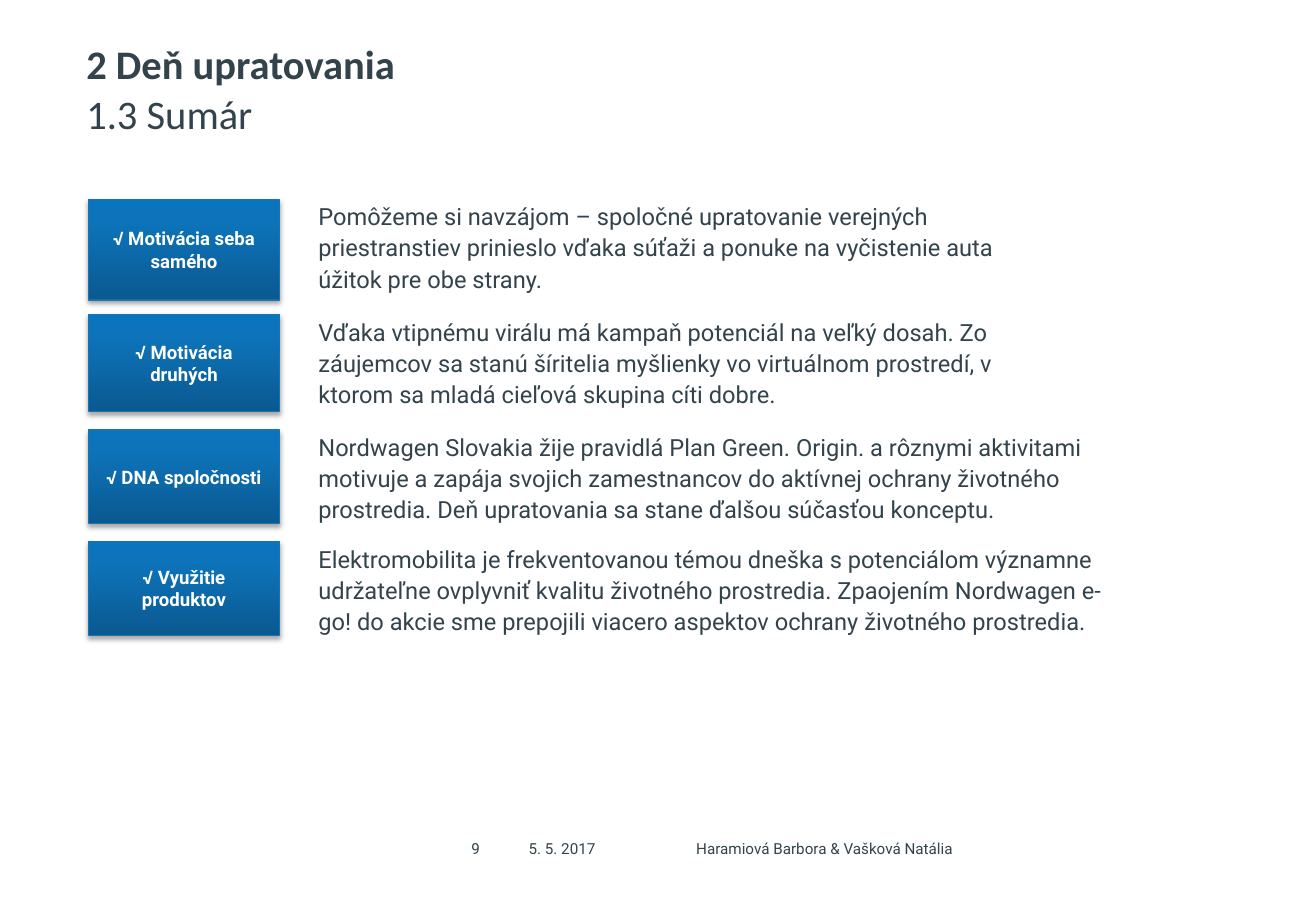
import copy
from dataclasses import dataclass

import lxml.etree
import pptx
import pptx.dml.color
import pptx.enum.shapes
import pptx.enum.text
import pptx.oxml
import pptx.oxml.ns
import pptx.slide
import pptx.util
from pptx.util import Inches

SLATE = pptx.dml.color.RGBColor(0x33, 0x43, 0x4C)
WHITE = pptx.dml.color.RGBColor(0xFF, 0xFF, 0xFF)
OUTLINE = pptx.dml.color.RGBColor(0x1E, 0x72, 0xAC)
DEEP_BLUE = pptx.dml.color.RGBColor(0x0A, 0x59, 0x90)
MID_BLUE = pptx.dml.color.RGBColor(0x0D, 0x74, 0xBB)
LIGHT_BLUE = pptx.dml.color.RGBColor(0x0A, 0x75, 0xBF)
GRADIENT = ((0, DEEP_BLUE), (80, MID_BLUE), (100, LIGHT_BLUE))
HEADING_FONT = "Calibri"
BODY_FONT = "Roboto"
SHADOW = (
    f'<a:outerShdw {pptx.oxml.ns.nsdecls("a")} blurRad="39370" dist="22860" '
    'dir="5400000" rotWithShape="0"><a:srgbClr val="000000">'
    '<a:alpha val="35000"/></a:srgbClr></a:outerShdw>'
)


@dataclass(frozen=True)
class Label:
    text: str
    left: float
    top: float
    width: float
    height: float
    size: float
    font: str = BODY_FONT
    bold: bool = False
    line_spacing: float = 1.0
    space_after: float = 0


@dataclass(frozen=True)
class Point:
    title: str
    detail: str
    top: float
    height: float
    detail_width: float


LABELS = (
    Label("2 Deň upratovania", 0.71, 0.31, 8.88, 0.39, 24, HEADING_FONT, True, 1.03),
    Label("1.3 Sumár", 0.71, 0.72, 8.88, 0.58, 24, HEADING_FONT, False, 1.03, 10),
    Label("9", 3.88, 6.91, 0.39, 0.16, 9),
    Label("5. 5. 2017", 4.35, 6.91, 1.18, 0.16, 9),
    Label("Haramiová Barbora & Vašková Natália", 5.73, 6.91, 3.84, 0.16, 9),
)

POINTS = (
    Point(
        "√ Motivácia seba samého",
        "Pomôžeme si navzájom – spoločné upratovanie verejných priestranstiev "
        "prinieslo vďaka súťaži a ponuke na vyčistenie auta úžitok pre obe strany.",
        1.64, 0.83, 6.12,
    ),
    Point(
        "√ Motivácia druhých",
        "Vďaka vtipnému virálu má kampaň potenciál na veľký dosah. Zo záujemcov "
        "sa stanú šíritelia myšlienky vo virtuálnom prostredí, v ktorom sa mladá "
        "cieľová skupina cíti dobre.",
        2.59, 0.8, 6.12,
    ),
    Point(
        "√ DNA spoločnosti",
        "Nordwagen Slovakia žije pravidlá Plan Green. Origin. a rôznymi aktivitami "
        "motivuje a zapája svojich zamestnancov do aktívnej ochrany životného "
        "prostredia. Deň upratovania sa stane ďalšou súčasťou konceptu.",
        3.54, 0.77, 6.68,
    ),
    Point(
        "√ Využitie produktov",
        "Elektromobilita je frekventovanou témou dneška s potenciálom významne "
        "udržateľne ovplyvniť kvalitu životného prostredia. Zpaojením Nordwagen "
        "e-go! do akcie sme prepojili viacero aspektov ochrany životného prostredia.",
        4.46, 0.77, 6.68,
    ),
)


def add_label(page: pptx.slide.Slide, label: Label) -> None:
    box = page.shapes.add_textbox(
        Inches(label.left), Inches(label.top), Inches(label.width), Inches(label.height)
    )
    frame = box.text_frame
    frame.word_wrap = True
    frame.margin_left = frame.margin_right = 0
    frame.margin_top = frame.margin_bottom = 0
    para = frame.paragraphs[0]
    para.line_spacing = label.line_spacing
    para.space_after = pptx.util.Pt(label.space_after)
    span = para.add_run()
    span.text = label.text
    span.font.name = label.font
    span.font.size = pptx.util.Pt(label.size)
    span.font.bold = label.bold
    span.font.color.rgb = SLATE


def add_point(page: pptx.slide.Slide, point: Point) -> None:
    box = page.shapes.add_shape(
        pptx.enum.shapes.MSO_SHAPE.FLOWCHART_PROCESS,
        Inches(0.73), Inches(point.top), Inches(1.57), Inches(point.height),
    )
    box.fill.gradient()
    box.fill.gradient_angle = 90
    properties = box._element.spPr
    stop_list = properties.find(f".//{pptx.oxml.ns.qn('a:gsLst')}")
    stop_list.append(copy.deepcopy(stop_list[-1]))
    for stop, (percent, color) in zip(box.fill.gradient_stops, GRADIENT):
        stop.position = percent / 100
        stop.color.rgb = color
    box.line.color.rgb = OUTLINE
    box.line.width = pptx.util.Pt(0.75)
    box.shadow.inherit = False
    effects = properties.find(pptx.oxml.ns.qn("a:effectLst"))
    effects.append(lxml.etree.fromstring(SHADOW))

    frame = box.text_frame
    frame.word_wrap = True
    frame.vertical_anchor = pptx.enum.text.MSO_ANCHOR.MIDDLE
    para = frame.paragraphs[0]
    para.alignment = pptx.enum.text.PP_ALIGN.CENTER
    span = para.add_run()
    span.text = point.title
    span.font.name = BODY_FONT
    span.font.size = pptx.util.Pt(11)
    span.font.bold = True
    span.font.color.rgb = WHITE

    add_label(
        page,
        Label(point.detail, 2.62, point.top, point.detail_width, 0.59, 14,
              line_spacing=1.1, space_after=10),
    )


def main() -> None:
    deck = pptx.Presentation()
    deck.slide_width = Inches(10.83)
    deck.slide_height = Inches(7.5)
    page = deck.slides.add_slide(deck.slide_layouts[6])
    for label in LABELS:
        add_label(page, label)
    for point in POINTS:
        add_point(page, point)
    deck.save("out.pptx")


if __name__ == "__main__":
    main()
